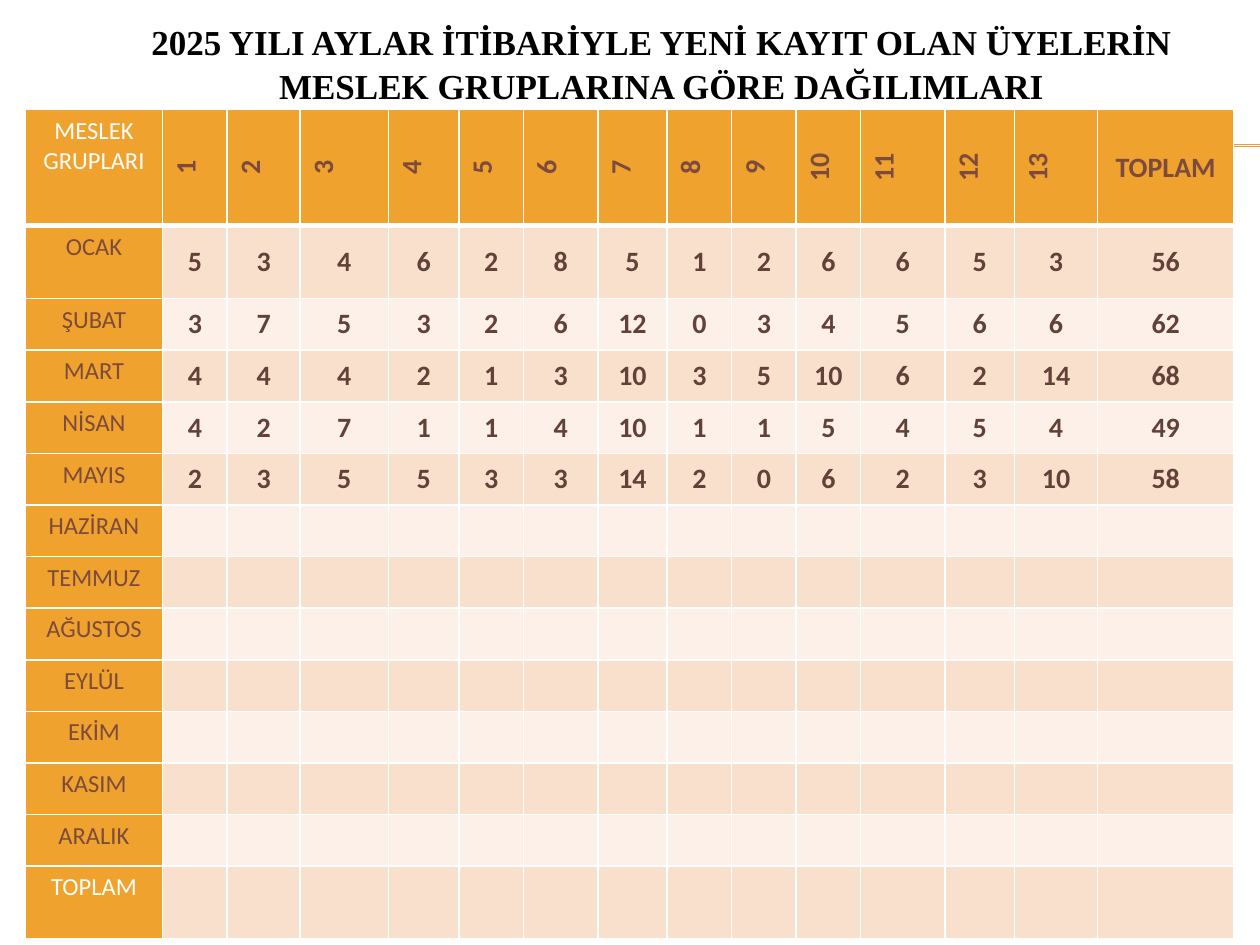
from lxml import etree
from pptx import Presentation
from pptx.dml.color import RGBColor
from pptx.enum.shapes import MSO_CONNECTOR
from pptx.enum.text import MSO_ANCHOR, PP_ALIGN
from pptx.oxml.ns import qn
from pptx.util import Cm, Pt

STRAIGHT = MSO_CONNECTOR.STRAIGHT
CENTER = PP_ALIGN.CENTER
TOP, MIDDLE = MSO_ANCHOR.TOP, MSO_ANCHOR.MIDDLE

TITLE = "2025 YILI AYLAR İTİBARİYLE YENİ KAYIT OLAN ÜYELERİN MESLEK GRUPLARINA GÖRE DAĞILIMLARI"
CORNER = "MESLEK GRUPLARI"
TOTAL = "TOPLAM"
GROUPS = [str(number) for number in range(1, 14)]
MONTHS = {
    "OCAK": [5, 3, 4, 6, 2, 8, 5, 1, 2, 6, 6, 5, 3],
    "ŞUBAT": [3, 7, 5, 3, 2, 6, 12, 0, 3, 4, 5, 6, 6],
    "MART": [4, 4, 4, 2, 1, 3, 10, 3, 5, 10, 6, 2, 14],
    "NİSAN": [4, 2, 7, 1, 1, 4, 10, 1, 1, 5, 4, 5, 4],
    "MAYIS": [2, 3, 5, 5, 3, 3, 14, 2, 0, 6, 2, 3, 10],
    "HAZİRAN": [],
    "TEMMUZ": [],
    "AĞUSTOS": [],
    "EYLÜL": [],
    "EKİM": [],
    "KASIM": [],
    "ARALIK": [],
}

COLUMN_WIDTHS = [2.77, 1.3, 1.47, 1.78, 1.42, 1.3, 1.5, 1.4, 1.3, 1.3, 1.3, 1.7, 1.4, 1.68, 2.74]
ROW_HEIGHTS = [2.34, 1.47] + [1.04] * 11 + [1.47]
TABLE_LEFT, TABLE_TOP = 0.51, 2.21
LINE_LEFT, LINE_RIGHT = 1.42, 25.4
LINE_HEIGHTS = [2.92, 2.95]

ORANGE, WHITE, BROWN = "F0A22E", "FFFFFF", "7C4B3B"
BANDS = ["FCF0E8", "F9E0CD"]
TITLE_FONT = {"name": "Times New Roman", "size": Pt(20), "bold": True}
LABEL_FONT = {"name": "Calibri", "size": Pt(14), "bold": False}
NUMBER_FONT = {"name": "Calibri", "size": Pt(16), "bold": True}


def rgb(color):
    return RGBColor.from_string(color)


def write(frame, text, font_values, color):
    paragraph = frame.paragraphs[0]
    paragraph.alignment = CENTER
    run = paragraph.add_run()
    run.text = text
    for name, value in font_values.items():
        setattr(run.font, name, value)
    run.font.color.rgb = rgb(color)
    return paragraph


def set_borders(cell, widths):
    properties = cell._tc.get_or_add_tcPr()
    for side, width in widths.items():
        line = etree.SubElement(properties, qn("a:ln" + side), w=str(Pt(width)))
        fill = etree.SubElement(line, qn("a:solidFill"))
        etree.SubElement(fill, qn("a:srgbClr"), val=WHITE)


def cell_format(row, column):
    if column == 0:
        color = WHITE if row in (0, len(ROW_HEIGHTS) - 1) else BROWN
        return LABEL_FONT, color, ORANGE, TOP
    if row == 0:
        anchor = MIDDLE if column == len(COLUMN_WIDTHS) - 1 else TOP
        return NUMBER_FONT, BROWN, ORANGE, anchor
    return NUMBER_FONT, "624139", BANDS[row % 2], MIDDLE


def add_lines(slide):
    for height in LINE_HEIGHTS:
        connector = slide.shapes.add_connector(
            STRAIGHT, Cm(LINE_LEFT), Cm(height), Cm(LINE_RIGHT), Cm(height))
        connector.line.color.rgb = rgb(ORANGE)
        connector.line.width = Pt(0.75)
        etree.SubElement(connector._element.spPr, qn("a:effectLst"))


def add_title(slide):
    title = slide.shapes.add_textbox(Cm(1.27), Cm(0), Cm(24.13), Cm(2.51))
    title.text_frame.word_wrap = True
    title.text_frame.vertical_anchor = MIDDLE
    write(title.text_frame, TITLE, TITLE_FONT, "000000").line_spacing = 1.05


def add_member_table(slide):
    rows = [[CORNER, *GROUPS, TOTAL]]
    for month, counts in MONTHS.items():
        totals = [sum(counts)] if counts else []
        rows.append([month, *counts, *totals])
    rows.append([TOTAL])

    table = slide.shapes.add_table(
        len(rows), len(COLUMN_WIDTHS), Cm(TABLE_LEFT), Cm(TABLE_TOP),
        Cm(sum(COLUMN_WIDTHS)), Cm(sum(ROW_HEIGHTS))).table
    table.first_row = table.horz_banding = False
    for column, width in zip(table.columns, COLUMN_WIDTHS):
        column.width = Cm(width)
    for row, height in zip(table.rows, ROW_HEIGHTS):
        row.height = Cm(height)

    for row, values in enumerate(rows):
        for column in range(len(COLUMN_WIDTHS)):
            cell = table.cell(row, column)
            font_values, color, fill, anchor = cell_format(row, column)
            set_borders(cell, {"L": 1, "R": 1, "T": 3 if row == 1 else 1, "B": 3 if row == 0 else 1})
            cell.fill.solid()
            cell.fill.fore_color.rgb = rgb(fill)
            cell.vertical_anchor = anchor
            if row == 0 and 0 < column <= len(GROUPS):
                cell._tc.get_or_add_tcPr().set("vert", "vert270")
            if column < len(values):
                write(cell.text_frame, str(values[column]), font_values, color)


def main():
    presentation = Presentation()
    presentation.slide_width = Cm(25.4)
    presentation.slide_height = Cm(19.05)
    slide = presentation.slides.add_slide(presentation.slide_layouts[6])
    add_lines(slide)
    add_title(slide)
    add_member_table(slide)
    presentation.save("out.pptx")


if __name__ == "__main__":
    main()
